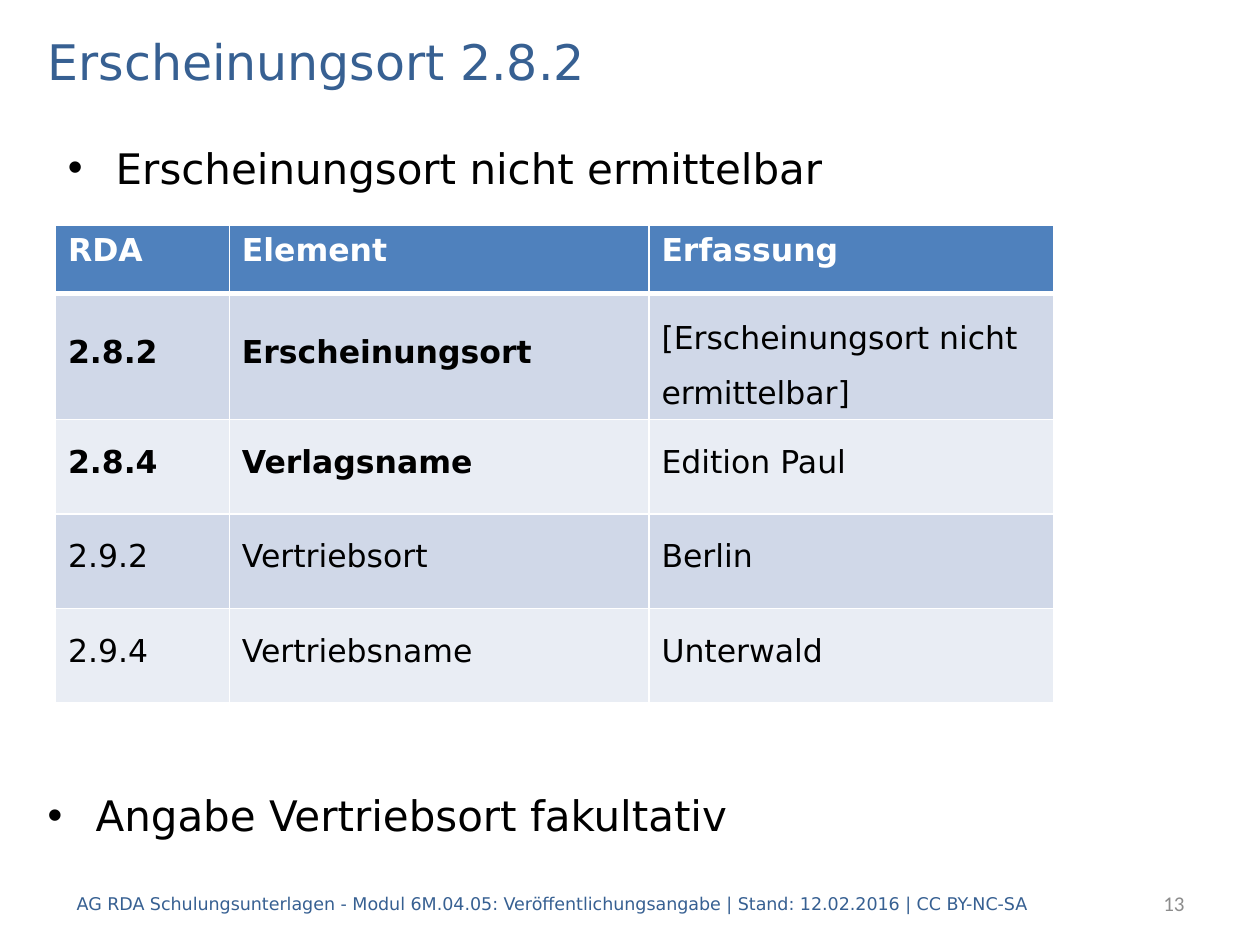
from lxml.etree import SubElement
from pptx import Presentation
from pptx.dml.color import RGBColor
from pptx.enum.text import MSO_ANCHOR as Anchor, PP_ALIGN as Align
from pptx.oxml.ns import qn
from pptx.util import Inches, Pt

NAVY = RGBColor(0x37, 0x60, 0x92)
GREY = RGBColor(0x8C, 0x8C, 0x8C)
BLACK = RGBColor(0, 0, 0)
WHITE = RGBColor(0xFF, 0xFF, 0xFF)
HEADER_BLUE = RGBColor(0x4F, 0x81, 0xBD)
BANDS = (RGBColor(0xD0, 0xD8, 0xE8), RGBColor(0xE9, 0xED, 0xF4))

FONT = "DejaVu Sans"
COLUMN_WIDTHS = (1.38, 3.33, 3.21)
ROW_HEIGHTS = (0.54, 0.95, 0.75, 0.75, 0.75)
ROWS = (
    ("RDA", "Element", "Erfassung"),
    ("2.8.2", "Erscheinungsort", "[Erscheinungsort nicht ermittelbar]"),
    ("2.8.4", "Verlagsname", "Edition Paul"),
    ("2.9.2", "Vertriebsort", "Berlin"),
    ("2.9.4", "Vertriebsname", "Unterwald"),
)
CORE_ROWS = (1, 2)


def write(paragraph, text, size, color, font=FONT, bold=False):
    run = paragraph.add_run()
    run.text = text
    run.font.size = Pt(size)
    run.font.name = font
    run.font.bold = bold
    run.font.color.rgb = color


def add_text(slide, box, text, size, color, font=FONT,
             anchor=Anchor.MIDDLE, align=Align.LEFT):
    frame = slide.shapes.add_textbox(*map(Inches, box)).text_frame
    frame.word_wrap = True
    frame.vertical_anchor = anchor
    paragraph = frame.paragraphs[0]
    paragraph.alignment = align
    write(paragraph, text, size, color, font)
    return paragraph


def add_bullet(slide, box, text):
    paragraph = add_text(slide, box, text, 24, BLACK, anchor=Anchor.TOP)
    paragraph.space_before = Pt(5)
    properties = paragraph._p.get_or_add_pPr()
    properties.set("marL", str(Inches(0.38)))
    properties.set("indent", str(-Inches(0.38)))
    SubElement(properties, qn("a:buFont")).set("typeface", "Arial")
    SubElement(properties, qn("a:buChar")).set("char", "•")


def set_borders(cell, bottom):
    """Draw white cell borders; bottom is the width of the lower one in points."""
    properties = cell._tc.get_or_add_tcPr()
    widths = {"a:lnL": 1, "a:lnR": 1, "a:lnT": 1, "a:lnB": bottom}
    for position, (tag, width) in enumerate(widths.items()):
        line = SubElement(properties, qn(tag))
        line.set("w", str(Pt(width)))
        fill = SubElement(line, qn("a:solidFill"))
        SubElement(fill, qn("a:srgbClr")).set("val", str(WHITE))
        properties.insert(position, line)


def fill_cell(cell, text, row, column):
    is_header = row == 0
    paragraph = cell.text_frame.paragraphs[0]
    cell.fill.solid()
    cell.fill.fore_color.rgb = HEADER_BLUE if is_header else BANDS[(row - 1) % 2]
    set_borders(cell, bottom=3 if is_header else 1)
    bold = is_header or (row in CORE_ROWS and column < 2)
    write(paragraph, text, 18, WHITE if is_header else BLACK, bold=bold)
    if not is_header:
        cell.vertical_anchor = Anchor.MIDDLE
        paragraph.space_before = paragraph.space_after = Pt(6)
        paragraph.line_spacing = 1.5 if text.startswith("[") else Pt(16)


def add_element_table(slide, left, top):
    table = slide.shapes.add_table(
        len(ROWS), len(COLUMN_WIDTHS), Inches(left), Inches(top),
        Inches(sum(COLUMN_WIDTHS)), Inches(sum(ROW_HEIGHTS))).table
    for column, width in zip(table.columns, COLUMN_WIDTHS):
        column.width = Inches(width)
    for row, height in zip(table.rows, ROW_HEIGHTS):
        row.height = Inches(height)
    for row, texts in enumerate(ROWS):
        for column, text in enumerate(texts):
            fill_cell(table.cell(row, column), text, row, column)


def add_footer(slide, top, height):
    add_text(slide, (0.51, top, 8.35, height),
             "AG RDA Schulungsunterlagen - Modul 6M.04.05: Veröffentlichungsangabe"
             " | Stand: 12.02.2016 | CC BY-NC-SA", 10, NAVY)
    add_text(slide, (7.91, top, 1.59, height), "13", 12, GREY,
             font="Calibri", align=Align.RIGHT)


def main():
    presentation = Presentation()
    presentation.slide_width = Inches(10)
    presentation.slide_height = Inches(7.5)
    slide = presentation.slides.add_slide(presentation.slide_layouts[6])
    add_text(slide, (0.28, 0.2, 9.45, 0.56), "Erscheinungsort 2.8.2", 28, NAVY)
    add_bullet(slide, (0.44, 1.08, 9.45, 0.71), "Erscheinungsort nicht ermittelbar")
    add_element_table(slide, 0.44, 1.79)
    add_bullet(slide, (0.28, 6.22, 9.45, 0.61), "Angabe Vertriebsort fakultativ")
    add_footer(slide, 6.97, 0.4)
    presentation.save("out.pptx")


if __name__ == "__main__":
    main()
